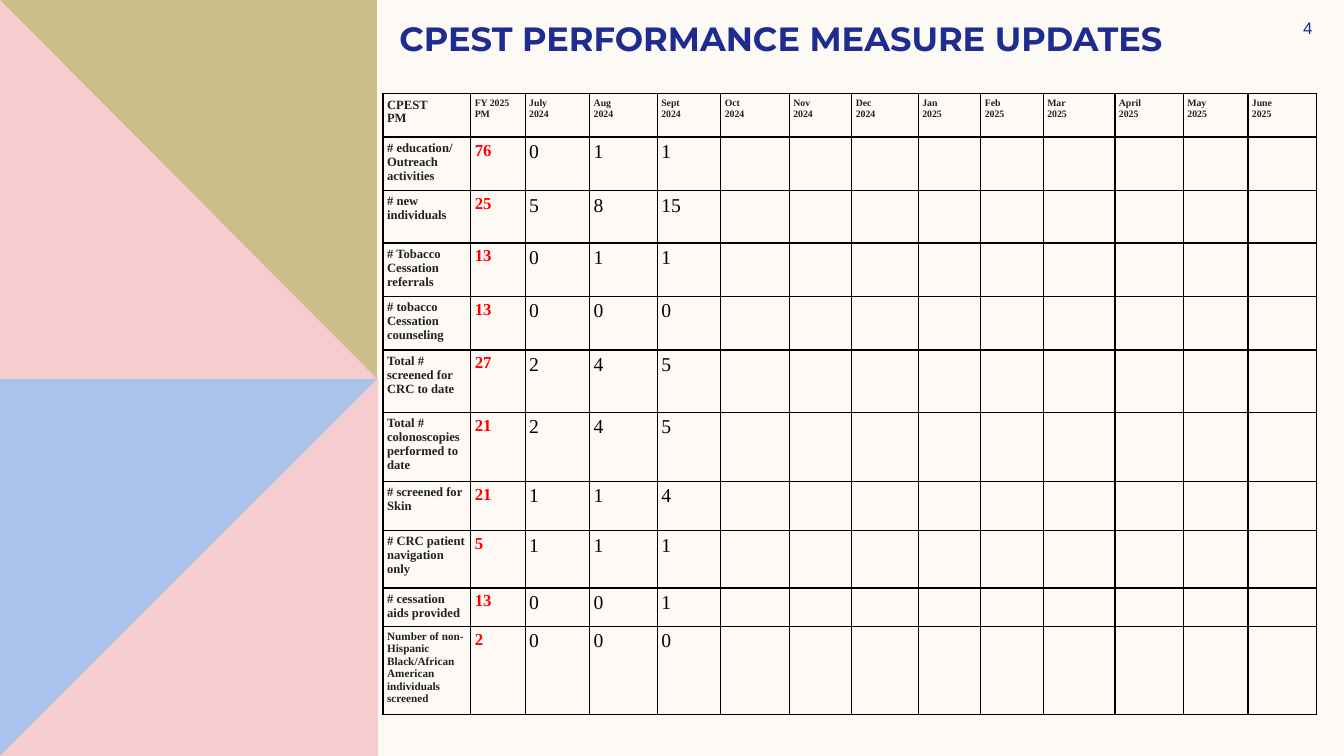
from dataclasses import dataclass

from lxml.etree import SubElement
from pptx import Presentation
from pptx.dml.color import RGBColor
from pptx.enum.text import MSO_ANCHOR as Anchor, MSO_AUTO_SIZE as Fit, PP_ALIGN as Align
from pptx.oxml.ns import qn
from pptx.slide import Slide
from pptx.table import _Cell as Cell
from pptx.text.text import TextFrame as Frame
from pptx.util import Emu, Inches, Pt

BLUE = RGBColor(0xAA, 0xC3, 0xE8)
PINK = RGBColor(0xF5, 0xCD, 0xCE)
OLIVE = RGBColor(0xCC, 0xBE, 0x89)
CREAM = RGBColor(0xFD, 0xFA, 0xF6)
NAVY = RGBColor(0x1F, 0x2C, 0x8F)
INK = RGBColor(0x20, 0x21, 0x24)
RED = RGBColor(0xFF, 0x00, 0x00)
BLACK = RGBColor(0x00, 0x00, 0x00)

WIDE, HIGH = Inches(13.33), Inches(7.5)
SERIF = "Times New Roman"
COLS = [6.53, 4.05, 4.8, 5.03, 4.73, 5.1, 4.65, 4.95, 4.65, 4.65, 5.33, 5.1, 4.8, 5.1]
MONTHS = ["July", "Aug", "Sept", "Oct", "Nov", "Dec",
          "Jan", "Feb", "Mar", "April", "May", "June"]


@dataclass(frozen=True)
class Panel:
    color: RGBColor
    points: tuple[tuple[float, float], ...]


@dataclass(frozen=True)
class Measure:
    label: str
    goal: int
    counts: tuple[int, ...]
    high: float
    size: int = 9


PANELS = [
    Panel(BLUE, ((0, 50), (28.13, 50), (28.13, 100), (0, 100))),
    Panel(PINK, ((28.13, 50), (28.13, 100), (0, 100))),
    Panel(OLIVE, ((0, 0), (28.06, 0), (28.06, 50.13), (0, 50.13))),
    Panel(PINK, ((0, 0), (28.06, 50.13), (0, 50.13))),
]

HEAD = 5.73
MEASURES = [
    Measure("# education/\nOutreach activities", 76, (0, 1, 1), 7.07),
    Measure("# new individuals", 25, (5, 8, 15), 6.93),
    Measure("# Tobacco\nCessation referrals", 13, (0, 1, 1), 6.87),
    Measure("# tobacco\nCessation\ncounseling", 13, (0, 0, 0), 6.93),
    Measure("Total # screened for CRC to date", 27, (2, 4, 5), 8.27),
    Measure("Total # colonoscopies performed to date", 21, (2, 4, 5), 8.53),
    Measure("# screened for Skin", 21, (1, 1, 4), 6.53),
    Measure("# CRC patient navigation only", 5, (1, 1, 1), 7.6),
    Measure("# cessation aids provided", 13, (0, 0, 1), 4.93),
    Measure("Number of non-Hispanic Black/African American individuals screened",
            2, (0, 0, 0), 10.93, 8),
]


def across(share: float) -> Emu:
    return Emu(round(WIDE * share / 100))


def down(share: float) -> Emu:
    return Emu(round(HIGH * share / 100))


def write(frame: Frame, text: str, *, size: float, color: RGBColor, font: str = SERIF,
          bold: bool = False, align: Align = Align.LEFT) -> None:
    for i, line in enumerate(text.split("\n")):
        para = frame.add_paragraph() if i else frame.paragraphs[0]
        para.alignment = align
        run = para.add_run()
        run.text = line
        run.font.name, run.font.size = font, Pt(size)
        run.font.bold, run.font.color.rgb = bold, color


def draw_panel(slide: Slide, panel: Panel) -> None:
    first, *rest = [(across(x), down(y)) for x, y in panel.points]
    build = slide.shapes.build_freeform(*first)
    build.add_line_segments(rest, close=True)
    shape = build.convert_to_shape()
    shape.shadow.inherit = False
    shape.fill.solid()
    shape.fill.fore_color.rgb = panel.color
    shape.line.fill.background()


def style(cell: Cell) -> None:
    cell.margin_left = cell.margin_right = Inches(0.04)
    cell.margin_top = cell.margin_bottom = Inches(0.04)
    props = cell._tc.get_or_add_tcPr()
    for side in ("a:lnL", "a:lnR", "a:lnT", "a:lnB"):
        line = SubElement(props, qn(side), w=str(Pt(1)))
        fill = SubElement(line, qn("a:solidFill"))
        SubElement(fill, qn("a:srgbClr"), val=str(BLACK))
    cell.fill.background()


def draw_table(slide: Slide) -> None:
    highs = [HEAD] + [item.high for item in MEASURES]
    table = slide.shapes.add_table(len(highs), len(COLS), across(28.5), down(12.4),
                                   across(sum(COLS)), down(sum(highs))).table
    table.first_row = table.horz_banding = False
    for col, wide in zip(table.columns, COLS):
        col.width = across(wide)
    for row, high in zip(table.rows, highs):
        row.height = down(high)
    for cell in table.iter_cells():
        style(cell)

    write(table.cell(0, 0).text_frame, "CPEST\nPM", size=9, color=INK, bold=True)
    heads = ["FY 2025 PM"] + [f"{month}\n{2024 + i // 6}" for i, month in enumerate(MONTHS)]
    for c, text in enumerate(heads, 1):
        write(table.cell(0, c).text_frame, text, size=7, color=INK, bold=True)
    for r, item in enumerate(MEASURES, 1):
        write(table.cell(r, 0).text_frame, item.label, size=item.size, color=INK, bold=True)
        write(table.cell(r, 1).text_frame, str(item.goal), size=12, color=RED, bold=True)
        for c, count in enumerate(item.counts, 2):
            write(table.cell(r, c).text_frame, str(count), size=14, color=BLACK)
        for c in range(2 + len(item.counts), len(COLS)):
            para = table.cell(r, c).text_frame.paragraphs[0]
            SubElement(para._p, qn("a:endParaRPr"), sz="1400")


def draw_title(slide: Slide) -> None:
    title = slide.shapes.title
    title.left, title.top = across(28.96), down(1.73)
    title.width, title.height = across(68.87), down(9.07)
    frame = title.text_frame
    frame.auto_size, frame.word_wrap = Fit.NONE, True
    frame.vertical_anchor = Anchor.TOP
    write(frame, "CPEST PERFORMANCE MEASURE UPDATES", size=24, color=NAVY,
          font="Montserrat", bold=True)


def draw_page(slide: Slide) -> None:
    box = slide.shapes.add_textbox(across(95.5), down(1.73), across(3.6), down(4))
    frame = box.text_frame
    frame.word_wrap, frame.vertical_anchor = True, Anchor.MIDDLE
    write(frame, "4", size=12, color=NAVY, font="Arial", align=Align.CENTER)


def main() -> None:
    deck = Presentation()
    deck.slide_width, deck.slide_height = WIDE, HIGH
    slide = deck.slides.add_slide(deck.slide_layouts[5])
    slide.background.fill.solid()
    slide.background.fill.fore_color.rgb = CREAM
    for panel in PANELS:
        draw_panel(slide, panel)
    draw_title(slide)
    draw_page(slide)
    draw_table(slide)
    deck.save("out.pptx")


if __name__ == "__main__":
    main()
